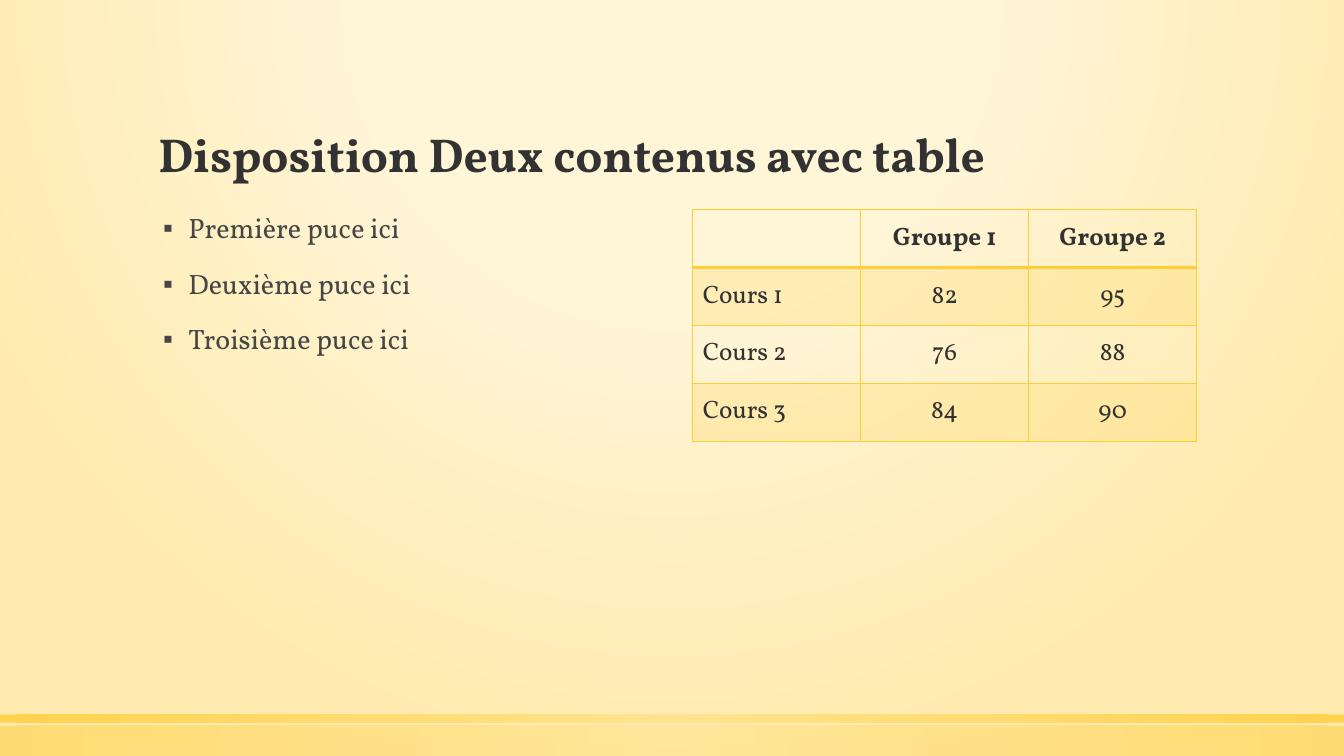
from dataclasses import dataclass

from lxml.etree import SubElement
from pptx import Presentation
from pptx.dml.color import RGBColor
from pptx.enum.shapes import MSO_SHAPE as Preset
from pptx.enum.text import MSO_ANCHOR as Anchor, MSO_AUTO_SIZE as AutoSize, PP_ALIGN as Align
from pptx.oxml.ns import qn
from pptx.util import Inches, Pt

PLAIN_TABLE = "{2D5ABB26-0587-4C30-8999-92F81FD0307C}"
GROUPS = ["Groupe 1", "Groupe 2"]
SCORES = {"Cours 1": [82, 95], "Cours 2": [76, 88], "Cours 3": [84, 90]}
BULLETS = ["Première puce ici", "Deuxième puce ici", "Troisième puce ici"]


@dataclass(frozen=True)
class Theme:
    font: str = "Vollkorn"
    dark: str = "323232"
    body: str = "464646"
    gold: str = "FFCD36"
    light_gold: str = "FFE186"
    cream: str = "FFF5D7"
    sand: str = "FFEBAF"
    title_size: int = 34
    body_size: int = 20
    table_size: int = 18


def add(parent, tag, **attributes):
    return SubElement(parent, qn(f"a:{tag}"), {key: str(value) for key, value in attributes.items()})


def add_colour(parent, colour, alpha=100):
    node = add(parent, "srgbClr", val=colour)
    if alpha < 100:
        add(node, "alpha", val=alpha * 1000)


def apply(target, formats):
    for name, value in formats.items():
        setattr(target, name, value)


class SlideBuilder:
    def __init__(self, page, theme):
        self.page = page
        self.theme = theme

    def radial_fill(self, owner, fill, stops, top=50, bottom=50):
        """Fill with a circular gradient; stops are (position, colour, alpha) in percent."""
        fill.gradient()
        gradient = owner.element.find(f".//{qn('a:gradFill')}")
        for child in list(gradient):
            gradient.remove(child)
        stop_list = add(gradient, "gsLst")
        for position, colour, alpha in stops:
            add_colour(add(stop_list, "gs", pos=position * 1000), colour, alpha)
        circle = add(gradient, "path", path="circle")
        add(circle, "fillToRect", l=50000, t=top * 1000, r=50000, b=bottom * 1000)

    def background(self):
        theme = self.theme
        stops = [(0, theme.cream, 59), (40, theme.cream, 66), (100, theme.sand, 100)]
        self.radial_fill(self.page, self.page.background.fill, stops, -80, 180)

    def band(self, top, height, alpha):
        bar = self.page.shapes.add_shape(
            Preset.RECTANGLE, 0, Inches(top), Inches(13.33), Inches(height))
        bar.shadow.inherit = False
        bar.line.fill.background()
        stops = [(0, self.theme.light_gold, alpha), (100, self.theme.gold, alpha)]
        self.radial_fill(bar, bar.fill, stops)

    def style(self, para, size, colour, bold=False, **formats):
        apply(para, formats)
        apply(para.font, {"name": self.theme.font, "size": Pt(size), "bold": bold})
        para.font.color.rgb = RGBColor.from_string(colour)

    def title(self, text, left, top, width, height):
        box = self.page.shapes.title
        apply(box, {"left": Inches(left), "top": Inches(top),
                    "width": Inches(width), "height": Inches(height)})
        apply(box.text_frame, {"text": text, "word_wrap": True, "auto_size": AutoSize.NONE,
                               "vertical_anchor": Anchor.BOTTOM})
        self.style(box.text_frame.paragraphs[0], self.theme.title_size, self.theme.dark, True,
                   alignment=Align.LEFT, line_spacing=0.9)

    def bullets(self, lines, left, top, width, height):
        box = self.page.shapes.add_textbox(
            Inches(left), Inches(top), Inches(width), Inches(height))
        frame = box.text_frame
        apply(frame, {"text": "\n".join(lines), "word_wrap": True})
        for index, para in enumerate(frame.paragraphs):
            properties = para._p.get_or_add_pPr()
            properties.set("marL", str(Inches(0.3)))
            properties.set("indent", str(Inches(-0.25)))
            add(properties, "buFont", typeface="Arial")
            add(properties, "buChar", char="▪")
            self.style(para, self.theme.body_size, self.theme.body,
                       line_spacing=0.9, space_before=Pt(18 if index else 0))

    def borders(self, cell, top, bottom):
        properties = cell._tc.get_or_add_tcPr()
        sides = {"lnL": 1, "lnR": 1, "lnT": top, "lnB": bottom}
        for position, (side, width) in enumerate(sides.items()):
            line = add(properties, side, w=Pt(width))
            add_colour(add(line, "solidFill"), self.theme.gold)
            properties.insert(position, line)

    def table(self, rows, left, top, width, height):
        table = self.page.shapes.add_table(
            len(rows), len(rows[0]), Inches(left), Inches(top),
            Inches(width), Inches(height)).table
        apply(table, {"first_row": False, "horz_banding": False})
        table._tbl.tblPr.find(qn("a:tableStyleId")).text = PLAIN_TABLE
        for row, values in enumerate(rows):
            for column, value in enumerate(values):
                cell = table.cell(row, column)
                apply(cell, {"text": str(value), "vertical_anchor": Anchor.MIDDLE})
                self.style(cell.text_frame.paragraphs[0], self.theme.table_size,
                           self.theme.dark, row == 0,
                           alignment=Align.CENTER if column else Align.LEFT)
                if row % 2:
                    add_colour(add(cell._tc.get_or_add_tcPr(), "solidFill"), self.theme.gold, 20)
                else:
                    cell.fill.background()
                self.borders(cell, top=2 if row == 1 else 1, bottom=2 if row == 0 else 1)


def main():
    deck = Presentation()
    apply(deck, {"slide_width": Inches(13.33), "slide_height": Inches(7.5)})
    builder = SlideBuilder(deck.slides.add_slide(deck.slide_layouts[5]), Theme())
    builder.background()
    builder.band(top=7.2, height=0.3, alpha=50)
    builder.band(top=7.09, height=0.08, alpha=80)
    builder.title("Disposition Deux contenus avec table", 1.47, 0.51, 10.4, 1.35)
    builder.bullets(BULLETS, 1.47, 2.08, 5, 4.51)
    rows = [["", *GROUPS]] + [[course, *scores] for course, scores in SCORES.items()]
    builder.table(rows, 6.87, 2.08, 5, 2.3)
    deck.save("out.pptx")


if __name__ == "__main__":
    main()
